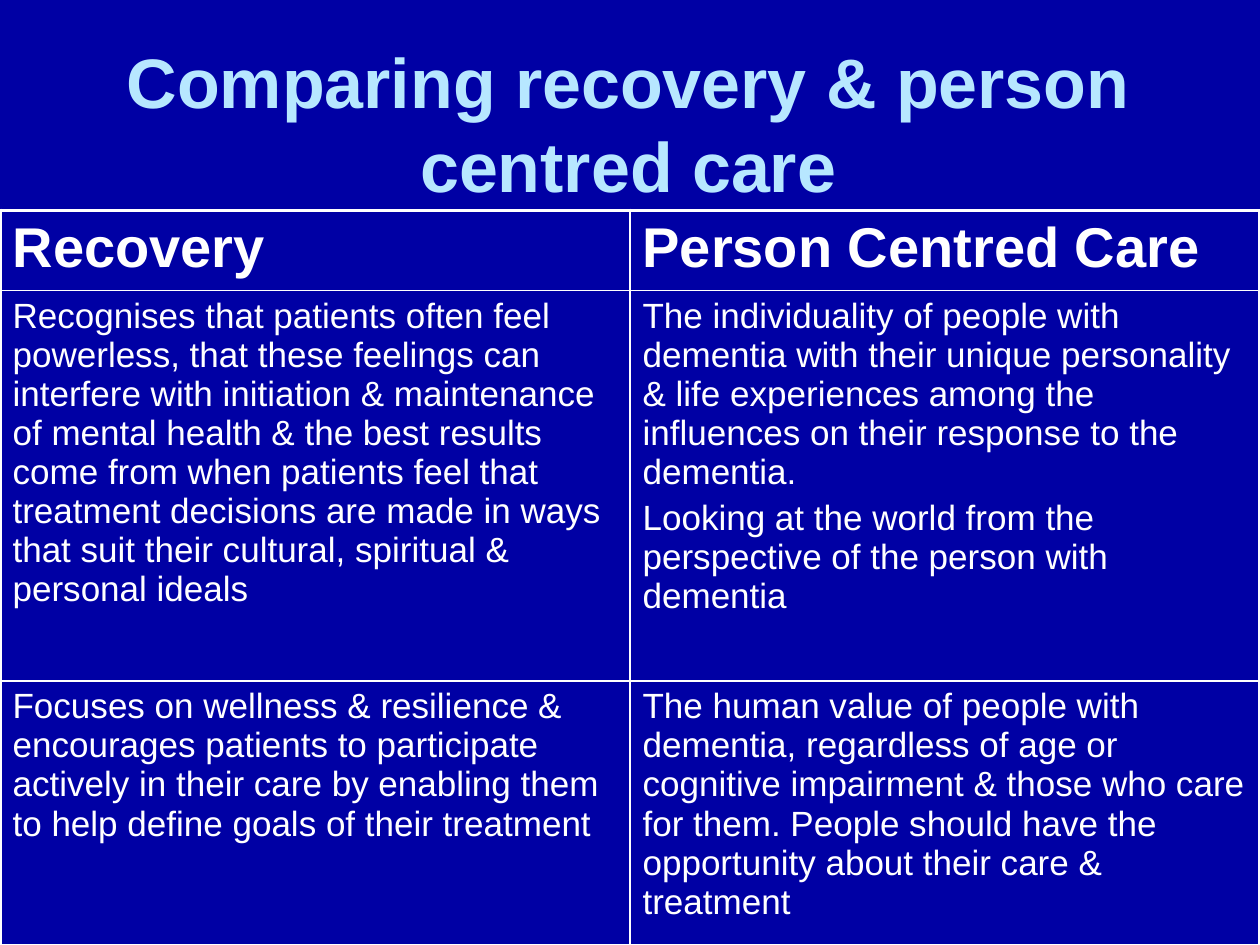
from typing import NamedTuple

from lxml import etree
from pptx import Presentation
from pptx.dml.color import RGBColor
from pptx.enum.text import MSO_ANCHOR, PP_ALIGN
from pptx.oxml.ns import qn
from pptx.util import Inches, Pt

NAVY = RGBColor(0x00, 0x00, 0xA4)
PALE_BLUE = RGBColor(0xB7, 0xE7, 0xFF)
WHITE = RGBColor(0xFF, 0xFF, 0xFF)
FONT = "Arial"
OUTER_LINE, INNER_LINE = Pt(2.25), Pt(1)


class Row(NamedTuple):
    height: float
    size: int
    bold: bool
    recovery: list[str]
    person_centred: list[str]


ROWS = [
    Row(0.63, 32, True, ["Recovery"], ["Person Centred Care"]),
    Row(3.1, 20, False,
        ["Recognises that patients often feel powerless, that these feelings can "
         "interfere with initiation & maintenance of mental health & the best results "
         "come from when patients feel that treatment decisions are made in ways that "
         "suit their cultural, spiritual & personal ideals"],
        ["The individuality of people with dementia with their unique personality & life "
         "experiences among the influences on their response to the dementia.",
         "Looking at the world from the perspective of the person with dementia"]),
    Row(2.1, 20, False,
        ["Focuses on wellness & resilience & encourages patients to participate actively "
         "in their care by enabling them to help define goals of their treatment"],
        ["The human value of people with dementia, regardless of age or cognitive "
         "impairment & those who care for them. People should have the opportunity "
         "about their care & treatment"]),
]


def write_text(frame, paragraphs: list[str], *, size: int, color: RGBColor,
               bold: bool = False, align=PP_ALIGN.LEFT) -> None:
    frame.word_wrap = True
    for index, text in enumerate(paragraphs):
        para = frame.add_paragraph() if index else frame.paragraphs[0]
        para.alignment = align
        if index:
            para.space_before = Pt(size * 0.2)
        span = para.add_run()
        span.text = text
        font = span.font
        font.name, font.size, font.bold = FONT, Pt(size), bold
        font.color.rgb = color


def set_borders(cell, outer_sides: dict[str, bool]) -> None:
    """Draw each side thick on the table's edge and thin inside."""
    properties = cell._tc.get_or_add_tcPr()
    for index, (side, is_outer) in enumerate(outer_sides.items()):
        width = OUTER_LINE if is_outer else INNER_LINE
        line = etree.Element(qn(f"a:ln{side}"), w=str(int(width)))
        fill = etree.SubElement(line, qn("a:solidFill"))
        etree.SubElement(fill, qn("a:srgbClr"), val=str(WHITE))
        properties.insert(index, line)


def add_comparison(page) -> None:
    heights = [Inches(row.height) for row in ROWS]
    table = page.shapes.add_table(len(ROWS), 2, Inches(0), Inches(1.67),
                                  Inches(10), sum(heights)).table
    for r, row in enumerate(ROWS):
        table.rows[r].height = heights[r]
        for c, paragraphs in enumerate((row.recovery, row.person_centred)):
            cell = table.cell(r, c)
            cell.fill.background()
            write_text(cell.text_frame, paragraphs, size=row.size,
                       color=WHITE, bold=row.bold)
            set_borders(cell, {"L": c == 0, "R": c == 1,
                               "T": r == 0, "B": r == len(ROWS) - 1})


def main() -> None:
    deck = Presentation()
    deck.slide_width, deck.slide_height = Inches(10), Inches(7.5)
    page = deck.slides.add_slide(deck.slide_layouts[6])
    page.background.fill.solid()
    page.background.fill.fore_color.rgb = NAVY

    # Title
    box = page.shapes.add_textbox(Inches(0.33), Inches(0.25), Inches(9.31), Inches(1.45))
    box.text_frame.vertical_anchor = MSO_ANCHOR.MIDDLE
    write_text(box.text_frame, ["Comparing recovery & person centred care"],
               size=40, color=PALE_BLUE, bold=True, align=PP_ALIGN.CENTER)

    # Comparison table
    add_comparison(page)
    deck.save("out.pptx")


if __name__ == "__main__":
    main()
